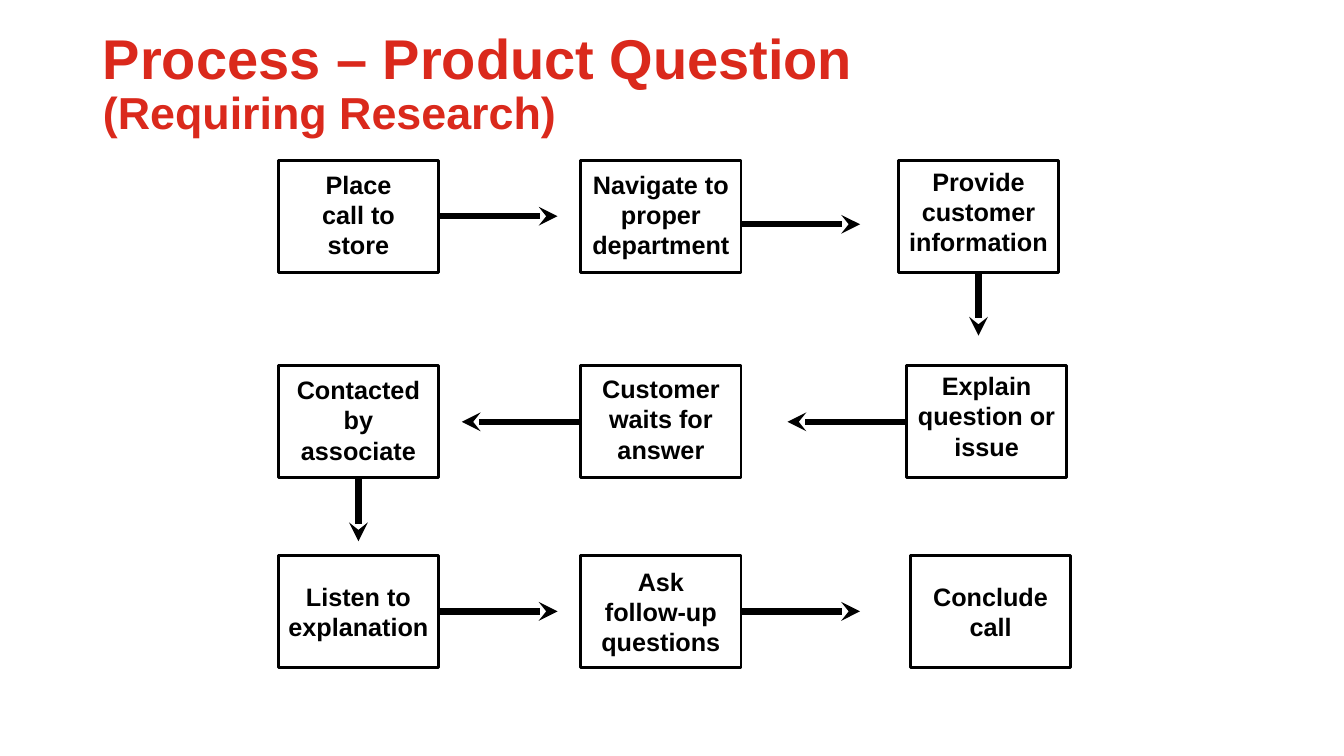
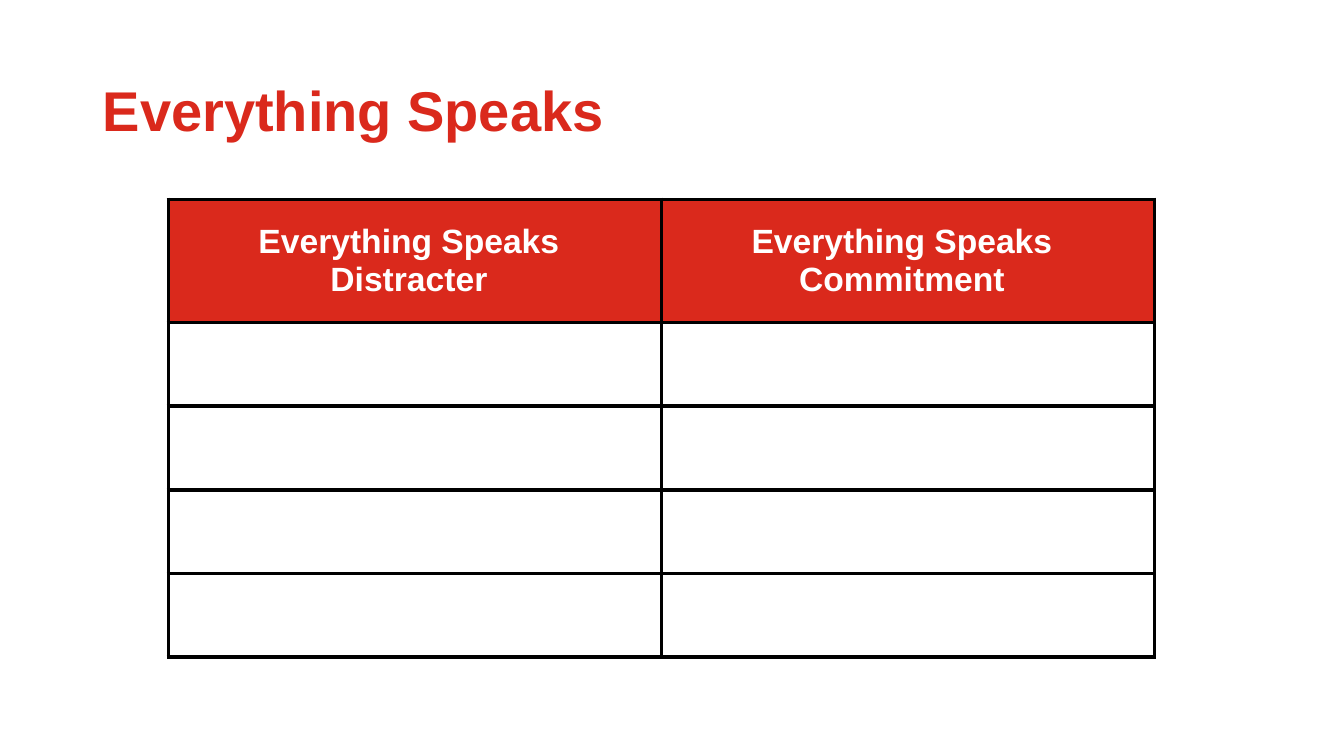
from pptx import Presentation
from pptx.dml.color import RGBColor
from pptx.enum.shapes import MSO_CONNECTOR, MSO_SHAPE
from pptx.enum.text import MSO_ANCHOR, MSO_AUTO_SIZE, PP_ALIGN
from pptx.oxml import parse_xml
from pptx.oxml.ns import nsdecls
from pptx.util import Inches, Pt

RED, BLACK, WHITE = "DA291C", "000000", "FFFFFF"
FONT = "Arial"
TITLE_ONLY = 5
BOX_W, BOX_H = 1.59, 1.11
ROWS = (0, 2.04, 3.92)

# Text, left offset, row, text lift, direction of the next arrow, arrow shift down
STEPS = [
    ("Place\vcall to\vstore", 0, 0, 0.02, "right", 0),
    ("Navigate to\vproper\vdepartment", 3, 0, 0.02, "right", 0.08),
    ("Provide\vcustomer\vinformation", 6.15, 0, 0.05, "down", 0),
    ("Explain\vquestion or\vissue", 6.23, 1, 0.06, "left", 0),
    ("Customer\vwaits for\vanswer", 3, 1, 0.03, "left", 0),
    ("Contacted\vby\vassociate", 0, 1, 0.02, "down", 0),
    ("Listen to\vexplanation", 0, 2, 0, "right", 0),
    ("Ask\vfollow-up\vquestions", 3, 2, 0, "right", 0),
    ("Conclude\vcall", 6.27, 2, 0, None, 0),
]

# Start point as a share of the box, then the arrow's run in inches
ARROWS = {
    "right": (1, 0.5, 1.18, 0),
    "left": (0, 0.5, -1.18, 0),
    "down": (0.5, 1, 0, 0.63),
}


def rgb(color):
    return RGBColor.from_string(color)


def style_runs(p, size, color):
    for r in p.runs:
        r.font.name = FONT
        r.font.size = Pt(size)
        r.font.bold = True
        r.font.color.rgb = rgb(color)


def add_titled_slide(prs, top, title, subtitle=None):
    slide = prs.slides.add_slide(prs.slide_layouts[TITLE_ONLY])
    sp = slide.shapes.title
    sp.left, sp.top = Inches(0.92), Inches(top)
    sp.width, sp.height = Inches(10.15), Inches(1.45)
    tf = sp.text_frame
    tf.auto_size = MSO_AUTO_SIZE.NONE
    tf.vertical_anchor = MSO_ANCHOR.MIDDLE
    p = tf.paragraphs[0]
    p.text = f"{title}\v{subtitle}" if subtitle else title
    p.alignment = PP_ALIGN.LEFT
    p.line_spacing = 0.9
    style_runs(p, 40, RED)
    if subtitle:
        p.runs[-1].font.size = Pt(32)
    return slide


def add_step(slide, x, y, text, lift):
    sp = slide.shapes.add_shape(
        MSO_SHAPE.RECTANGLE, Inches(x), Inches(y), Inches(BOX_W), Inches(BOX_H))
    sp.shadow.inherit = False
    sp.fill.solid()
    sp.fill.fore_color.rgb = rgb(WHITE)
    sp.line.color.rgb = rgb(BLACK)
    sp.line.width = Pt(2)
    tf = sp.text_frame
    tf.word_wrap = False
    tf.vertical_anchor = MSO_ANCHOR.MIDDLE
    tf.margin_top, tf.margin_bottom = Inches(0), Inches(2 * lift)
    p = tf.paragraphs[0]
    p.text = text
    p.alignment = PP_ALIGN.CENTER
    style_runs(p, 18, BLACK)


def add_arrow(slide, x, y, direction, shift):
    """Draw an arrow that leaves the box at x, y."""
    share_x, share_y, dx, dy = ARROWS[direction]
    x += share_x * BOX_W
    y += share_y * BOX_H + shift
    line = slide.shapes.add_connector(
        MSO_CONNECTOR.STRAIGHT, Inches(x), Inches(y), Inches(x + dx), Inches(y + dy))
    line.line.color.rgb = rgb(BLACK)
    line.line.width = Pt(4.5)
    line.line._get_or_add_ln().append(
        parse_xml(f'<a:tailEnd {nsdecls("a")} type="stealth"/>'))
    line._element.spPr.append(parse_xml(f'<a:effectLst {nsdecls("a")}/>'))


def add_flow(slide, left, top):
    for text, dx, row, lift, direction, shift in STEPS:
        x, y = left + dx, top + ROWS[row]
        add_step(slide, x, y, text, lift)
        if direction:
            add_arrow(slide, x, y, direction, shift)


def style_cell(cell, fill):
    tcPr = cell._tc.get_or_add_tcPr()
    for side in "LRTB":
        tcPr.append(parse_xml(
            f'<a:ln{side} {nsdecls("a")} w="{Pt(3)}"><a:solidFill>'
            f'<a:srgbClr val="{BLACK}"/></a:solidFill></a:ln{side}>'))
    cell.fill.solid()
    cell.fill.fore_color.rgb = rgb(fill)


def add_worksheet(slide, left, top, width, headers, blank_rows):
    head_h, row_h = 1.22, 0.83
    table = slide.shapes.add_table(
        blank_rows + 1, len(headers), Inches(left), Inches(top),
        Inches(width), Inches(head_h + blank_rows * row_h)).table
    for i, row in enumerate(table.rows):
        row.height = Inches(row_h if i else head_h)
        for cell in row.cells:
            style_cell(cell, WHITE if i else RED)
    for cell, text in zip(table.rows[0].cells, headers):
        cell.text_frame.text = text
        cell.vertical_anchor = MSO_ANCHOR.MIDDLE
        cell.margin_right = Inches(0.22)
        for p in cell.text_frame.paragraphs:
            p.alignment = PP_ALIGN.CENTER
            style_runs(p, 24, WHITE)


def main():
    prs = Presentation()
    prs.slide_width, prs.slide_height = Inches(13.33), Inches(7.5)
    slide = add_titled_slide(
        prs, 0.12, "Process – Product Question", "(Requiring Research)")
    add_flow(slide, 2.76, 1.59)
    slide = add_titled_slide(prs, 0.4, "Everything Speaks")
    add_worksheet(slide, 1.67, 1.98, 9.78, [
        "Everything Speaks\nDistracter", "Everything Speaks\nCommitment"], 4)
    prs.save("out.pptx")


if __name__ == "__main__":
    main()
